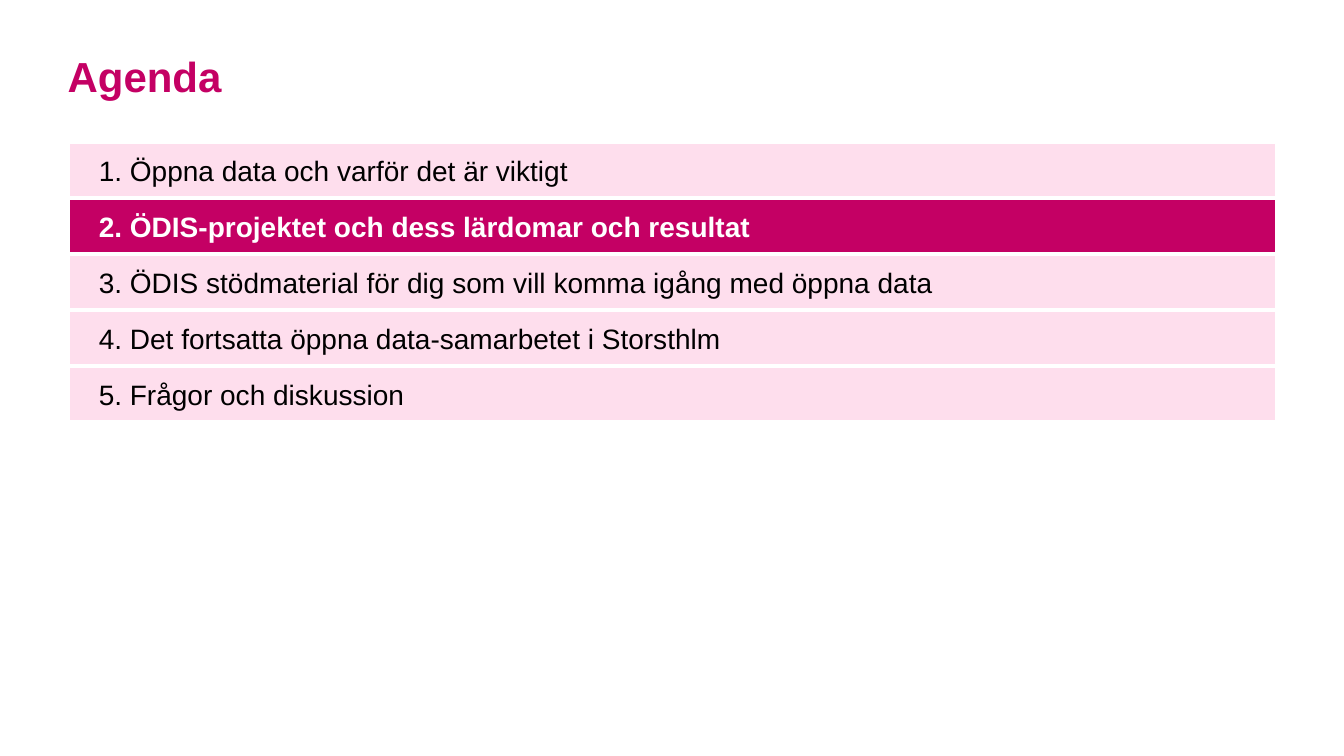
from pptx import Presentation
from pptx.dml.color import RGBColor
from pptx.enum.shapes import MSO_SHAPE
from pptx.enum.text import MSO_ANCHOR, MSO_AUTO_SIZE, PP_ALIGN
from pptx.util import Inches, Pt

RECT = MSO_SHAPE.RECTANGLE
TOP, MIDDLE = MSO_ANCHOR.TOP, MSO_ANCHOR.MIDDLE
LEFT = PP_ALIGN.LEFT
NO_FIT = MSO_AUTO_SIZE.NONE

FONT = "Arial"
COLORS = {"accent": "C40064", "tint": "FEDEED", "text": "000000", "white": "FFFFFF"}

SLIDE_W, SLIDE_H = 13.33, 7.5
MARGIN = 0.67
CONTENT_W = 12
TITLE_TOP, TITLE_H = 0.5, 0.91
ROW_H = 0.56
ROW_STEP = 0.555  # rows overlap by a hair so their white outlines meet

AGENDA = [
    "1. Öppna data och varför det är viktigt",
    "2. ÖDIS-projektet och dess lärdomar och resultat",
    "3. ÖDIS stödmaterial för dig som vill komma igång med öppna data",
    "4. Det fortsatta öppna data-samarbetet i Storsthlm",
    "5. Frågor och diskussion",
]
CURRENT = 1


def color(name):
    return RGBColor.from_string(COLORS[name])


def set_text(tf, text, size, color_name, bold, anchor, insets):
    tf.text = text
    tf.word_wrap = True
    tf.auto_size = NO_FIT
    tf.vertical_anchor = anchor
    tf.margin_left, tf.margin_top, tf.margin_right, tf.margin_bottom = map(Inches, insets)
    p = tf.paragraphs[0]
    p.alignment = LEFT
    font = p.runs[0].font
    font.name, font.size, font.bold = FONT, Pt(size), bold
    font.color.rgb = color(color_name)


def add_title(s, text, x, y, w, h):
    title = s.shapes.title
    title.left, title.top, title.width, title.height = map(Inches, (x, y, w, h))
    set_text(title.text_frame, text, 30, "accent", True, TOP, (0, 0, 0, 0))


def add_agenda(s, items, current, x, y, w):
    for i, item in enumerate(items):
        active = i == current
        row = s.shapes.add_shape(RECT, *map(Inches, (x, y + i * ROW_STEP, w, ROW_H)))
        row.shadow.inherit = False
        row.fill.solid()
        row.fill.fore_color.rgb = color("accent" if active else "tint")
        row.line.color.rgb = color("white")
        row.line.width = Pt(3)
        set_text(row.text_frame, item, 20, "white" if active else "text", active,
                 MIDDLE, (0.11, 0.11, 0, 0.11))
        # Left indent of the item text
        pPr = row.text_frame.paragraphs[0]._p.get_or_add_pPr()
        pPr.set("marL", str(Inches(0.2)))


def main():
    prs = Presentation()
    prs.slide_width, prs.slide_height = Inches(SLIDE_W), Inches(SLIDE_H)
    s = prs.slides.add_slide(prs.slide_layouts[5])
    add_title(s, "Agenda", MARGIN, TITLE_TOP, CONTENT_W, TITLE_H)
    add_agenda(s, AGENDA, CURRENT, MARGIN, TITLE_TOP + TITLE_H, CONTENT_W)
    prs.save("out.pptx")


if __name__ == "__main__":
    main()
